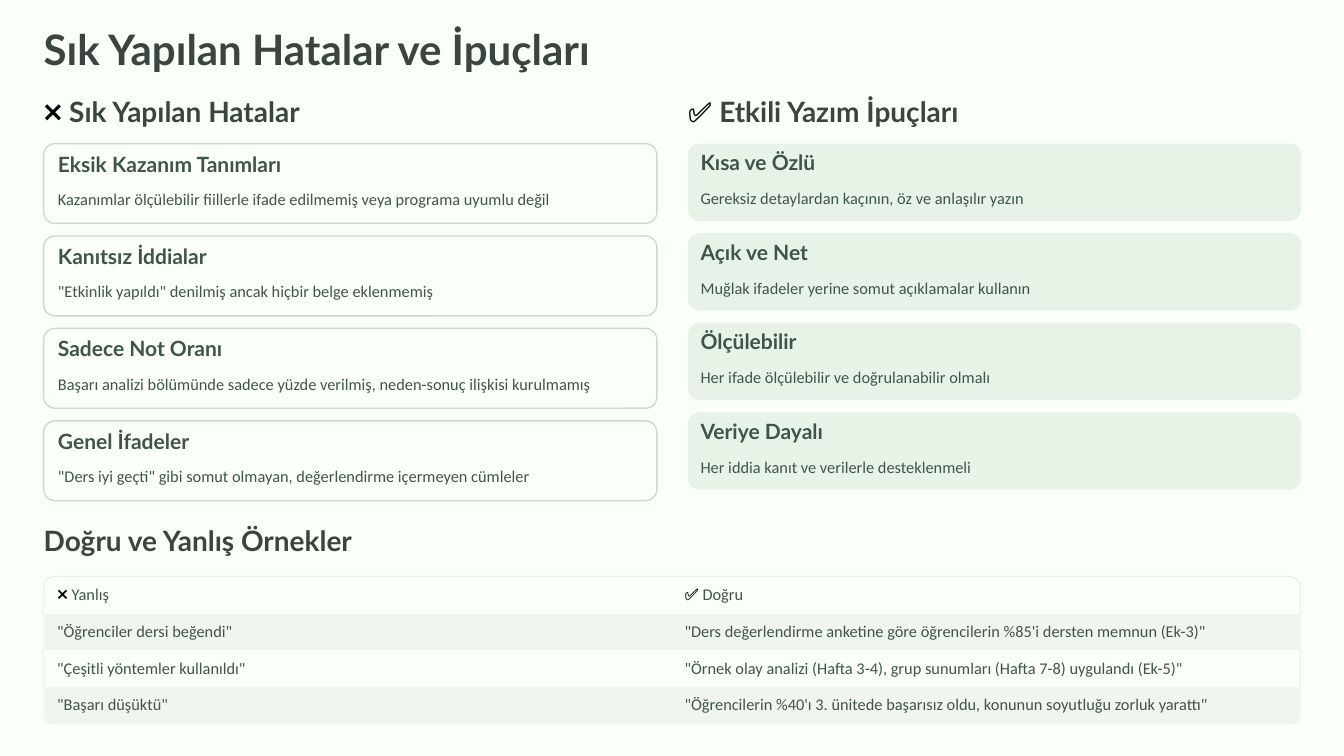
from dataclasses import dataclass
from typing import Any

import pptx
import pptx.dml.color
import pptx.enum.shapes
import pptx.enum.text
import pptx.oxml.ns
import pptx.util

Inches = pptx.util.Inches
Pt = pptx.util.Pt
RGBColor = pptx.dml.color.RGBColor
ROUNDED = pptx.enum.shapes.MSO_SHAPE.ROUNDED_RECTANGLE

PAGE = RGBColor(0xFA, 0xFF, 0xFA)
HEADING = RGBColor(0x3B, 0x45, 0x40)
BODY = RGBColor(0x40, 0x54, 0x49)
BLACK = RGBColor(0x00, 0x00, 0x00)
CARD_BORDER = RGBColor(0xCE, 0xD9, 0xCE)
TIP_FILL = RGBColor(0xE8, 0xF3, 0xE8)
TABLE_BORDER = RGBColor(0xE6, 0xEB, 0xE6)
STRIPE = RGBColor(0xF0, 0xF5, 0xF0)

NO_TABLE_STYLE = "{2D5ABB26-0587-4C30-8999-92F81FD0307C}"
ICONS = ("❌", "✅")
FRAME_FORMAT = {
    "margin_left": 0, "margin_right": 0, "margin_top": 0, "margin_bottom": 0,
    "word_wrap": False,
    "auto_size": pptx.enum.text.MSO_AUTO_SIZE.NONE,
    "vertical_anchor": pptx.enum.text.MSO_ANCHOR.TOP,
}
CELL_FORMAT = {
    "margin_left": Inches(0.15), "margin_right": Inches(0.15),
    "margin_top": Inches(0.1), "margin_bottom": Inches(0.05),
    "vertical_anchor": pptx.enum.text.MSO_ANCHOR.TOP,
}
PLAIN_TABLE = {"first_row": False, "horz_banding": False}


@dataclass(frozen=True)
class TextStyle:
    font: str
    size: float
    spacing: float
    color: RGBColor
    bold: bool


@dataclass(frozen=True)
class Card:
    heading: str
    detail: str


@dataclass(frozen=True)
class CardColumn:
    title: str
    left: float
    height: float
    pitch: float
    corner: float
    inset: float
    heading_drop: float
    detail_drop: float
    fill: RGBColor
    border: RGBColor | None
    cards: tuple[Card, ...]


TITLE = TextStyle("Lato", 36, 33.5, HEADING, True)
SECTION = TextStyle("Lato", 24, 20, HEADING, True)
CARD_HEADING = TextStyle("Lato", 18, 16.5, BODY, True)
DETAIL = TextStyle("Calibri", 14, 17, BODY, False)

MISTAKES = CardColumn(
    "❌ Sık Yapılan Hatalar", 0.52, 0.95, 1.1, 0.141, 0.17, 0.16, 0.54, PAGE, CARD_BORDER,
    (
        Card("Eksik Kazanım Tanımları",
             "Kazanımlar ölçülebilir fiillerle ifade edilmemiş veya programa uyumlu değil"),
        Card("Kanıtsız İddialar",
             '"Etkinlik yapıldı" denilmiş ancak hiçbir belge eklenmemiş'),
        Card("Sadece Not Oranı",
             "Başarı analizi bölümünde sadece yüzde verilmiş, neden-sonuç ilişkisi kurulmamış"),
        Card("Genel İfadeler",
             '"Ders iyi geçti" gibi somut olmayan, değerlendirme içermeyen cümleler'),
    ),
)
TIPS = CardColumn(
    "✅ Etkili Yazım İpuçları", 8.19, 0.92, 3.2 / 3, 0.146, 0.15, 0.14, 0.53, TIP_FILL, None,
    (
        Card("Kısa ve Özlü", "Gereksiz detaylardan kaçının, öz ve anlaşılır yazın"),
        Card("Açık ve Net", "Muğlak ifadeler yerine somut açıklamalar kullanın"),
        Card("Ölçülebilir", "Her ifade ölçülebilir ve doğrulanabilir olmalı"),
        Card("Veriye Dayalı", "Her iddia kanıt ve verilerle desteklenmeli"),
    ),
)
EXAMPLES = (
    ("❌ Yanlış", "✅ Doğru"),
    ('"Öğrenciler dersi beğendi"',
     '"Ders değerlendirme anketine göre öğrencilerin %85\'i dersten memnun (Ek-3)"'),
    ('"Çeşitli yöntemler kullanıldı"',
     '"Örnek olay analizi (Hafta 3-4), grup sunumları (Hafta 7-8) uygulandı (Ek-5)"'),
    ('"Başarı düşüktü"',
     '"Öğrencilerin %40\'ı 3. ünitede başarısız oldu, konunun soyutluğu zorluk yarattı"'),
)


def set_formats(target: Any, formats: dict[str, Any]) -> None:
    for attribute, value in formats.items():
        setattr(target, attribute, value)


def write(frame: Any, text: str, style: TextStyle) -> None:
    paragraph = frame.paragraphs[0]
    set_formats(paragraph, {
        "alignment": pptx.enum.text.PP_ALIGN.LEFT,
        "line_spacing": Pt(style.spacing),
    })
    pieces = [(text, style.color, style.bold)]
    if text.startswith(ICONS):
        pieces = [(text[0], BLACK, True), (text[1:], style.color, style.bold)]
    for words, color, bold in pieces:
        run = paragraph.add_run()
        run.text = words
        set_formats(run.font, {"name": style.font, "size": Pt(style.size), "bold": bold})
        run.font.color.rgb = color


def add_label(slide: Any, left: float, top: float, width: float, height: float,
              text: str, style: TextStyle) -> None:
    label = slide.shapes.add_textbox(Inches(left), Inches(top), Inches(width), Inches(height))
    set_formats(label.text_frame, FRAME_FORMAT)
    write(label.text_frame, text, style)


def add_panel(slide: Any, left: float, top: float, width: float, height: float, corner: float,
              fill: RGBColor, border: RGBColor | None, border_width: float) -> None:
    panel = slide.shapes.add_shape(
        ROUNDED, Inches(left), Inches(top), Inches(width), Inches(height))
    panel.adjustments[0] = corner
    panel.shadow.inherit = False
    panel.fill.solid()
    panel.fill.fore_color.rgb = fill
    if border is None:
        panel.line.fill.background()
    else:
        panel.line.color.rgb = border
        panel.line.width = Pt(border_width)


def add_card_column(slide: Any, column: CardColumn) -> None:
    add_label(slide, column.left, 1.25, 2.65, 0.29, column.title, SECTION)
    text_left = column.left + column.inset
    text_width = 7.3 - 2 * column.inset
    for index, card in enumerate(column.cards):
        top = 1.71 + index * column.pitch
        add_panel(slide, column.left, top, 7.3, column.height, column.corner,
                  column.fill, column.border, 1.2)
        add_label(slide, text_left, top + column.heading_drop, 2.4, 0.23,
                  card.heading, CARD_HEADING)
        add_label(slide, text_left, top + column.detail_drop, text_width, 0.24,
                  card.detail, DETAIL)


def add_examples(slide: Any) -> None:
    add_label(slide, 0.52, 6.35, 2.84, 0.28, "Doğru ve Yanlış Örnekler", SECTION)
    add_panel(slide, 0.52, 6.86, 14.96, 1.76, 0.076, PAGE, TABLE_BORDER, 0.6)
    examples = slide.shapes.add_table(
        len(EXAMPLES), 2, Inches(0.53), Inches(6.87), Inches(14.94), Inches(1.74))
    set_formats(examples.table, PLAIN_TABLE)
    style_id = next(examples.element.iter(pptx.oxml.ns.qn("a:tableStyleId")))
    style_id.text = NO_TABLE_STYLE
    for row_index, sentences in enumerate(EXAMPLES):
        for column_index, sentence in enumerate(sentences):
            cell = examples.table.cell(row_index, column_index)
            set_formats(cell, CELL_FORMAT)
            if row_index % 2:
                cell.fill.solid()
                cell.fill.fore_color.rgb = STRIPE
            else:
                cell.fill.background()
            write(cell.text_frame, sentence, DETAIL)


def main() -> None:
    deck = pptx.Presentation()
    set_formats(deck, {"slide_width": Inches(16), "slide_height": Inches(9)})
    slide = deck.slides.add_slide(deck.slide_layouts[5])
    slide.background.fill.solid()
    slide.background.fill.fore_color.rgb = PAGE

    title = slide.shapes.title
    set_formats(title, {"left": Inches(0.52), "top": Inches(0.41),
                        "width": Inches(14.96), "height": Inches(0.47)})
    set_formats(title.text_frame, FRAME_FORMAT)
    write(title.text_frame, "Sık Yapılan Hatalar ve İpuçları", TITLE)

    for column in (MISTAKES, TIPS):
        add_card_column(slide, column)
    add_examples(slide)
    deck.save("out.pptx")


if __name__ == "__main__":
    main()
